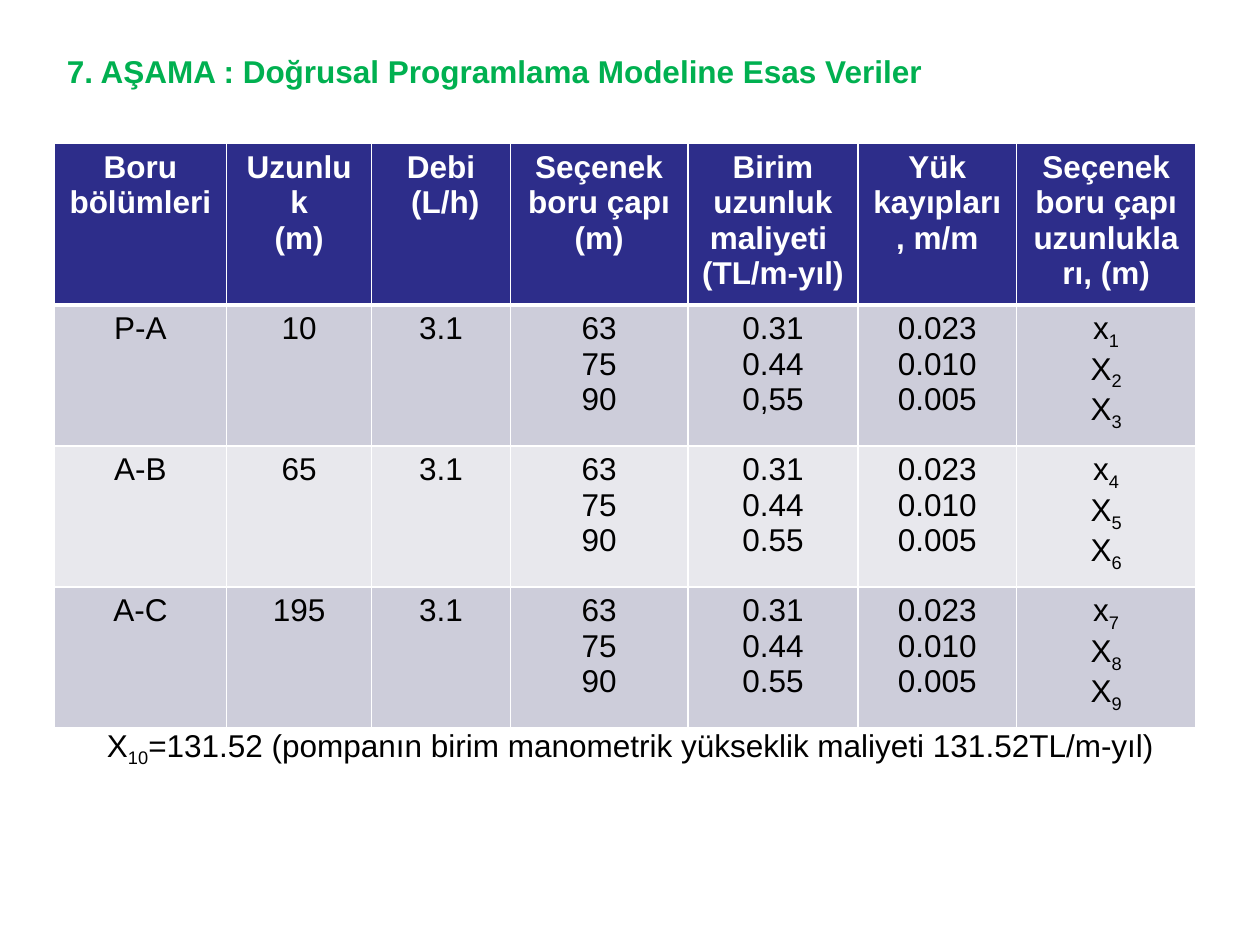
from lxml import etree
from pptx import Presentation
from pptx.dml.color import RGBColor
from pptx.enum.text import MSO_ANCHOR, MSO_AUTO_SIZE, PP_ALIGN
from pptx.oxml.ns import qn
from pptx.util import Inches, Pt

LEFT = PP_ALIGN.LEFT
CENTER = PP_ALIGN.CENTER
TOP = MSO_ANCHOR.TOP
NO_AUTOFIT = MSO_AUTO_SIZE.NONE

GREEN = RGBColor(0x00, 0xB0, 0x50)
NAVY = RGBColor(0x2D, 0x2D, 0x8A)
DARK_BAND = RGBColor(0xCD, 0xCD, 0xDA)
LIGHT_BAND = RGBColor(0xE8, 0xE8, 0xED)
WHITE = RGBColor(0xFF, 0xFF, 0xFF)
BLACK = RGBColor(0x00, 0x00, 0x00)

COLUMN_WIDTHS = [1.37, 1.15, 1.1, 1.41, 1.35, 1.26, 1.42]
HEADER_HEIGHT = 1.28
ROW_HEIGHT = 1.12

HEADERS = [
    ["Boru bölümleri"],
    ["Uzunluk", "(m)"],
    ["Debi", " (L/h)"],
    ["Seçenek boru çapı (m)"],
    ["Birim uzunluk maliyeti ", "(TL/m-yıl)"],
    ["Yük kayıpları, m/m"],
    ["Seçenek boru çapı uzunlukları, (m)"],
]
DIAMETERS = ["63", "75", "90"]
LOSSES = ["0.023", "0.010", "0.005"]
SECTIONS = [
    ("P-A", "10", ["0.31", "0.44", "0,55"]),
    ("A-B", "65", ["0.31", "0.44", "0.55"]),
    ("A-C", "195", ["0.31", "0.44", "0.55"]),
]


class SlideBuilder:
    body = {"name": "Arial", "size": Pt(18), "bold": False}
    strong = {**body, "bold": True}

    def __init__(self, presentation):
        self.slide = presentation.slides.add_slide(presentation.slide_layouts[5])

    def fill_text(self, text_frame, lines, style, color, alignment):
        for index, line in enumerate(lines):
            paragraph = text_frame.paragraphs[0] if index == 0 else text_frame.add_paragraph()
            paragraph.alignment = alignment
            for position, text in enumerate(line.split("_")):
                if not text:
                    continue
                run = paragraph.add_run()
                run.text = text
                for name, value in style.items():
                    setattr(run.font, name, value)
                run.font.color.rgb = color
                if position % 2:
                    run.font._element.set("baseline", "-25000")

    def place_text(self, shape, box, text, style, color):
        shape.left, shape.top, shape.width, shape.height = map(Inches, box)
        frame = shape.text_frame
        frame.word_wrap = True
        frame.auto_size = NO_AUTOFIT
        frame.vertical_anchor = TOP
        self.fill_text(frame, [text], style, color, LEFT)

    def title(self, box, text):
        self.place_text(self.slide.shapes.title, box, text, self.strong, GREEN)

    def text_box(self, box, text):
        shape = self.slide.shapes.add_textbox(*map(Inches, box))
        self.place_text(shape, box, text, self.body, BLACK)

    def border(self, cell, side, width):
        properties = cell._tc.get_or_add_tcPr()
        line = etree.SubElement(properties, qn(f"a:ln{side}"), w=str(Pt(width)))
        fill = etree.SubElement(line, qn("a:solidFill"))
        etree.SubElement(fill, qn("a:srgbClr"), val=str(WHITE))

    def table(self, left, top, rows):
        heights = [HEADER_HEIGHT] + [ROW_HEIGHT] * (len(rows) - 1)
        frame = self.slide.shapes.add_table(
            len(rows), len(COLUMN_WIDTHS), Inches(left), Inches(top),
            Inches(sum(COLUMN_WIDTHS)), Inches(sum(heights)))
        table = frame.table
        for column, width in zip(table.columns, COLUMN_WIDTHS):
            column.width = Inches(width)
        for row, height in zip(table.rows, heights):
            row.height = Inches(height)
        for row_index, row in enumerate(rows):
            header = row_index == 0
            band = DARK_BAND if row_index % 2 else LIGHT_BAND
            for column_index, lines in enumerate(row):
                cell = table.cell(row_index, column_index)
                for side in "LRTB":
                    thick = (header and side == "B") or (row_index == 1 and side == "T")
                    self.border(cell, side, 3 if thick else 1)
                cell.fill.solid()
                cell.fill.fore_color.rgb = NAVY if header else band
                self.fill_text(cell.text_frame, lines,
                               self.strong if header else self.body,
                               WHITE if header else BLACK, CENTER)


def section_row(index, section):
    name, length, costs = section
    first = 3 * index + 1
    variables = [f"x_{first}", f"X_{first + 1}", f"X_{first + 2}"]
    return [[name], [length], ["3.1"], DIAMETERS, costs, LOSSES, variables]


def main():
    presentation = Presentation()
    presentation.slide_width = Inches(10)
    presentation.slide_height = Inches(7.5)
    builder = SlideBuilder(presentation)
    builder.title((0.43, 0.36, 7.72, 0.4),
                  "7. AŞAMA : Doğrusal Programlama Modeline Esas Veriler")
    rows = [section_row(index, section) for index, section in enumerate(SECTIONS)]
    builder.table(0.43, 1.14, [HEADERS] + rows)
    builder.text_box((0.75, 5.71, 9.45, 0.4),
                     "X_10_=131.52 (pompanın birim manometrik yükseklik maliyeti 131.52TL/m-yıl)")
    presentation.save("out.pptx")


if __name__ == "__main__":
    main()
